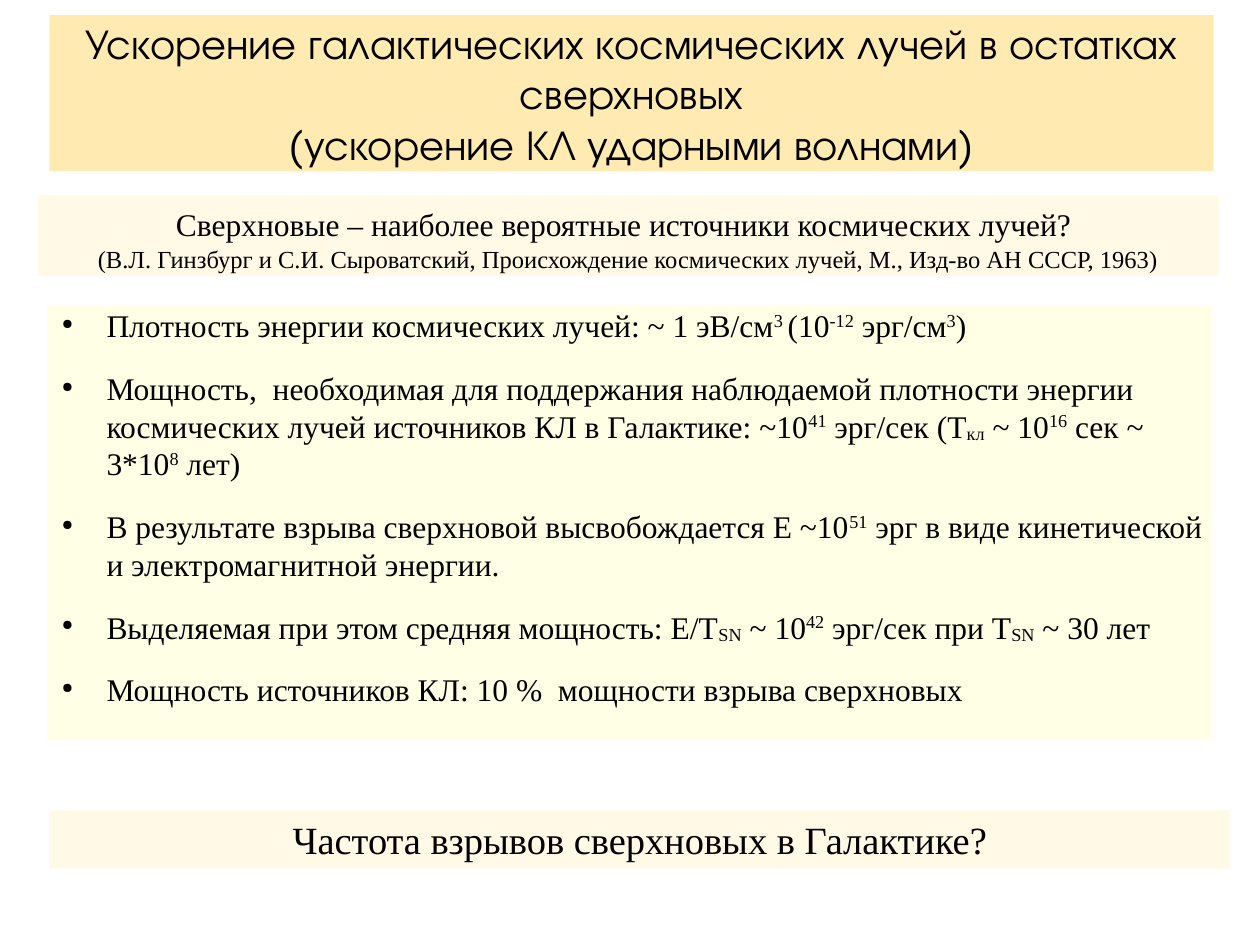
import pptx
import pptx.util
import pptx.dml.color
import pptx.enum.text
import pptx.oxml.ns
from dataclasses import dataclass
from lxml import etree

Pt = pptx.util.Pt
RGB = pptx.dml.color.RGBColor
Text = pptx.enum.text


@dataclass(frozen=True)
class Theme:
    ink: str = "000000"
    gold: tuple = ("FFBF00", 30)
    lemon: tuple = ("FFFF00", 10)
    cream: tuple = ("FFF5CE", 50)
    head: str = "TeX Gyre Adventor"
    body: str = "Times New Roman"
    title: int = 24
    ask: int = 22
    lead: int = 18
    space: int = 20
    cite: int = 14


THEME = Theme()
UP, DOWN = 33, -8

FACTS = [
    [("Плотность энергии космических лучей: ~ 1 эВ/см", 0), ("3 ", UP),
     ("(10", 0), ("-12", UP), (" эрг/см", 0), ("3", UP), (")", 0)],
    [("Мощность,  необходимая для поддержания наблюдаемой плотности энергии "
      "космических лучей источников КЛ в Галактике: ~10", 0), ("41", UP),
     (" эрг/сек (Τ", 0), ("кл", DOWN), (" ~ 10", 0), ("16", UP),
     (" сек ~ 3*10", 0), ("8", UP), (" лет)", 0)],
    [("В результате взрыва сверхновой высвобождается E ~10", 0), ("51", UP),
     (" эрг в виде кинетической и электромагнитной энергии.", 0)],
    [("Выделяемая при этом средняя мощность: E/T", 0), ("SN", DOWN),
     (" ~ 10", 0), ("42", UP), (" эрг/сек при T", 0), ("SN", DOWN),
     (" ~ 30 лет", 0)],
    [("Мощность источников КЛ: 10 %  мощности взрыва сверхновых", 0)],
]


def node(parent, tag, **attrs):
    return etree.SubElement(parent, pptx.oxml.ns.qn(tag), attrs)


def place(shape, box, tint, inset=(0, 0)):
    shape.left, shape.top, shape.width, shape.height = map(Pt, box)
    color, alpha = tint
    shape.fill.solid()
    shape.fill.fore_color.rgb = RGB.from_string(color)
    tone = shape.fill._xPr.find(".//" + pptx.oxml.ns.qn("a:srgbClr"))
    node(tone, "a:alpha", val=str(alpha * 1000))
    frame = shape.text_frame
    frame.word_wrap = True
    frame.auto_size = Text.MSO_AUTO_SIZE.NONE
    frame.vertical_anchor = Text.MSO_ANCHOR.TOP
    frame.margin_left = frame.margin_right = Pt(inset[0])
    frame.margin_top = frame.margin_bottom = Pt(inset[1])
    return frame


def write(para, text, size, face=THEME.body, base=0):
    run = para.add_run()
    run.text = text
    run.font.size = Pt(size)
    run.font.name = face
    run.font.color.rgb = RGB.from_string(THEME.ink)
    if base:
        run._r.get_or_add_rPr().set("baseline", str(base * 1000))


def mark(para):
    props = para._p.get_or_add_pPr()
    props.set("marL", str(Pt(34)))
    props.set("indent", str(Pt(-25.5)))
    node(node(props, "a:buClr"), "a:srgbClr", val=THEME.ink)
    node(props, "a:buSzPct", val="45000")
    node(props, "a:buChar", char="●")


def add_title(slide, box):
    frame = place(slide.shapes.title, box, THEME.gold)
    frame.vertical_anchor = Text.MSO_ANCHOR.MIDDLE
    para = frame.paragraphs[0]
    para.alignment = Text.PP_ALIGN.CENTER
    write(para, "Ускорение галактических космических лучей в остатках сверхновых",
          THEME.title, THEME.head)
    para.add_line_break()
    write(para, "(ускорение КЛ ударными волнами)", THEME.title, THEME.head)


def add_facts(slide, box):
    frame = place(slide.shapes.add_textbox(0, 0, 0, 0), box, THEME.lemon)
    for num, fact in enumerate(FACTS):
        para = frame.add_paragraph() if num else frame.paragraphs[0]
        mark(para)
        if num:
            para.space_before = Pt(14.2)
        for text, base in fact:
            write(para, text, THEME.lead, base=base)


def add_band(slide, box, lines):
    frame = place(slide.shapes.add_textbox(0, 0, 0, 0), box, THEME.cream, (7.2, 3.6))
    for num, line in enumerate(lines):
        para = frame.add_paragraph() if num else frame.paragraphs[0]
        para.alignment = Text.PP_ALIGN.CENTER
        for text, size in line:
            write(para, text, size)


def main():
    deck = pptx.Presentation()
    deck.slide_width, deck.slide_height = Pt(720), Pt(540)
    slide = deck.slides.add_slide(deck.slide_layouts.get_by_name("Title Only"))
    add_title(slide, (28.2, 8.6, 665.3, 89.3))
    add_facts(slide, (26.9, 175, 665.3, 247.7))
    add_band(slide, (21.6, 111.6, 674.8, 46), [
        [("Сверхновые – наиболее вероятные источники космических лучей?", THEME.lead),
         (" ", THEME.space)],
        [("(В.Л. Гинзбург и С.И. Сыроватский, Происхождение космических лучей, "
          "М., Изд-во АН СССР, 1963)", THEME.cite)],
    ])
    add_band(slide, (28.2, 463, 674.8, 33.2), [
        [("Частота взрывов сверхновых в Галактике?", THEME.ask)],
    ])
    deck.save("out.pptx")


if __name__ == "__main__":
    main()
